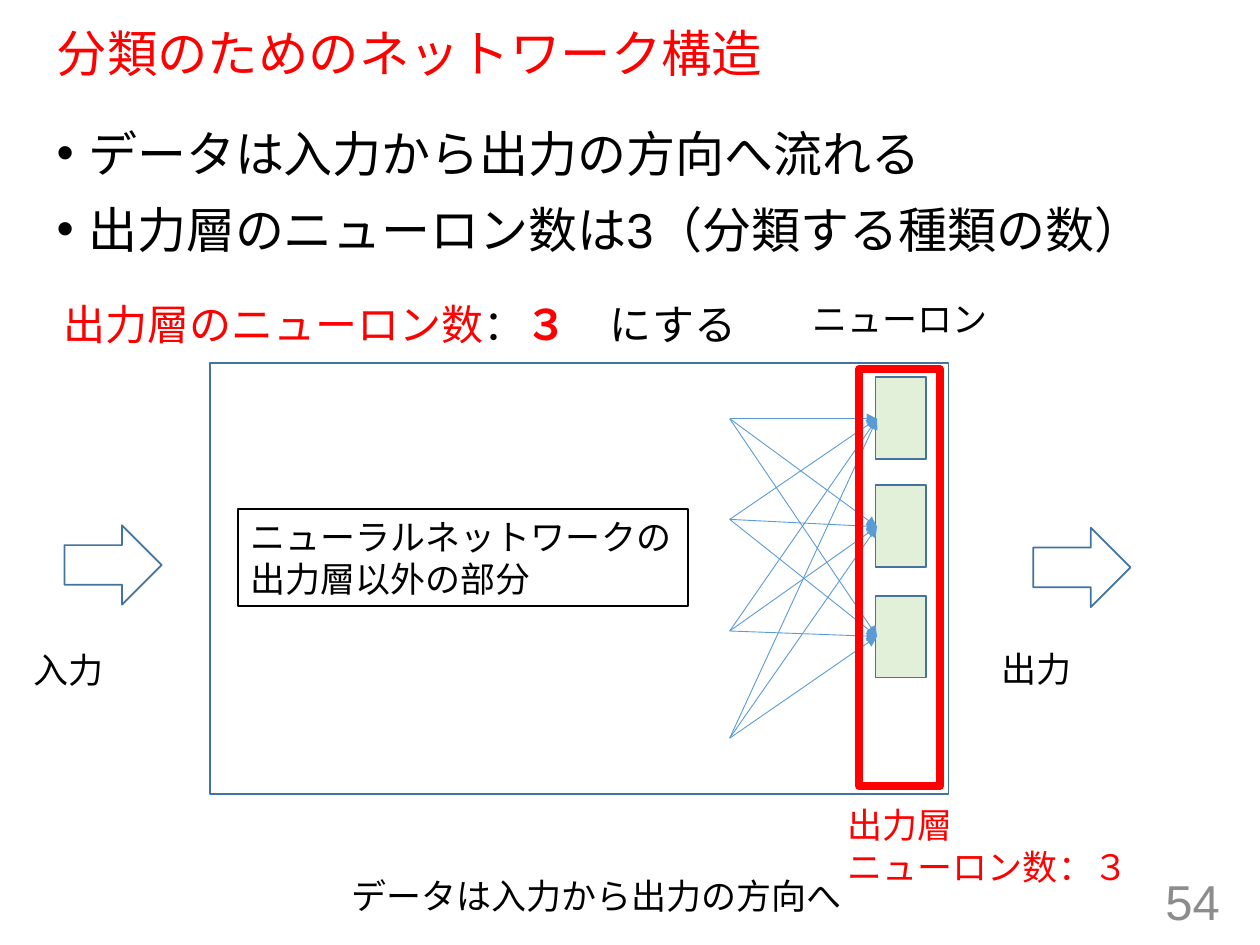
from lxml.etree import SubElement
from pptx import Presentation
from pptx.dml.color import RGBColor
from pptx.enum.shapes import MSO_CONNECTOR, MSO_SHAPE
from pptx.enum.text import MSO_ANCHOR, PP_ALIGN
from pptx.oxml.ns import qn
from pptx.util import Cm, Pt

RED, BLACK, BLUE = "FF0000", "000000", "43739E"
rgb = RGBColor.from_string

deck = Presentation()
deck.slide_width, deck.slide_height = Cm(25.4), Cm(19.05)
slide = deck.slides.add_slide(deck.slide_layouts[5])
shapes = slide.shapes


def write(box, paras, size, name, wrap=True, **form):
    """Fill a box; each paragraph is a list of (text, colour, bold) runs."""
    frame = box.text_frame
    frame.word_wrap = wrap
    for i, runs in enumerate(paras):
        para = frame.add_paragraph() if i else frame.paragraphs[0]
        look = {"alignment": PP_ALIGN.LEFT, **form}
        for key, value in look.items():
            setattr(para, key, value)
        for text, tint, bold in runs:
            run = para.add_run()
            run.text = text
            for key, value in {"size": Pt(size), "name": name, "bold": bold}.items():
                setattr(run.font, key, value)
            run.font.color.rgb = rgb(tint)
    return frame


def draw(kind, spot, line, width, fill=None):
    """Add a preset shape with an outline and an optional fill."""
    shape = shapes.add_shape(kind, *map(Cm, spot))
    shape.shadow.inherit = False
    shape.line.color.rgb = rgb(line)
    shape.line.width = Pt(width)
    if fill:
        shape.fill.solid()
        shape.fill.fore_color.rgb = rgb(fill)
    else:
        shape.fill.background()
    return shape


# Title
title = shapes.title
spot = {"left": 0.89, "top": 0.48, "width": 23.5, "height": 1.3}
for key, value in spot.items():
    setattr(title, key, Cm(value))
frame = write(title, [[("分類のためのネットワーク構造", RED, False)]], 28.8, "Arial",
              line_spacing=0.9)
frame.vertical_anchor = MSO_ANCHOR.MIDDLE

# Bullets
body = shapes.add_textbox(Cm(0.89), Cm(2.36), Cm(23.5), Cm(3.07))
points = ["データは入力から出力の方向へ流れる", "出力層のニューロン数は3（分類する種類の数）"]
frame = write(body, [[(text, BLACK, False)] for text in points], 28, "Arial",
              space_before=Pt(10))
for para in frame.paragraphs:
    props = para._p.get_or_add_pPr()
    props.set("marL", str(Cm(0.64)))
    props.set("indent", str(-Cm(0.64)))
    SubElement(props, qn("a:buFont")).set("typeface", "Arial")
    SubElement(props, qn("a:buChar")).set("char", "•")

# Page number
page = shapes.add_textbox(Cm(19.13), Cm(17.65), Cm(5.71), Cm(1.02))
frame = write(page, [[("54", "8C8C8C", False)]], 28, "Arial", alignment=PP_ALIGN.RIGHT)
frame.vertical_anchor = MSO_ANCHOR.MIDDLE

# Output neurons
for top in (7.6, 9.78, 12.01):
    draw(MSO_SHAPE.RECTANGLE, (17.65, top, 1.02, 1.65), BLUE, 1, "E2F0D9")

# Input and output arrows
for left, top in ((1.3, 10.59), (20.83, 10.64)):
    draw(MSO_SHAPE.RIGHT_ARROW, (left, top, 1.96, 1.6), BLUE, 1)

# Links from the previous layer to each output neuron
for start in (8.44, 10.47, 12.72, 14.88):
    for end in (8.44, 10.62, 12.83):
        link = shapes.add_connector(MSO_CONNECTOR.STRAIGHT, Cm(14.71), Cm(start),
                                    Cm(17.68), Cm(end))
        link.line.color.rgb = rgb("5B9BD5")
        link.line.width = Pt(0.5)
        SubElement(link.line._get_or_add_ln(), qn("a:tailEnd")).set("type", "triangle")
        SubElement(link._element.spPr, qn("a:effectLst"))

# Network frame and output layer frame
draw(MSO_SHAPE.RECTANGLE, (4.24, 7.32, 14.88, 8.69), BLUE, 1)
draw(MSO_SHAPE.RECTANGLE, (17.32, 7.44, 1.63, 8.41), RED, 4.5)

# Labels
labels = [
    ((0.43, 12.95, 1.93, 1.12), BLACK, ["入力"]),
    ((19.94, 12.93, 1.93, 1.12), BLACK, ["出力"]),
    ((6.83, 17.5, 10.49, 1.12), BLACK, ["データは入力から出力の方向へ"]),
    ((16.13, 5.87, 4.06, 1.12), BLACK, ["ニューロン"]),
    ((16.84, 16.08, 6.22, 1.96), RED, ["出力層", "ニューロン数：３"]),
]
for spot, tint, lines in labels:
    box = shapes.add_textbox(*map(Cm, spot))
    write(box, [[(text, tint, False)] for text in lines], 20, "Calibri", wrap=False)

# Hidden part of the network
part = draw(MSO_SHAPE.RECTANGLE, (4.8, 10.26, 9.07, 1.96), BLACK, 0.75)
lines = ["ニューラルネットワークの", "出力層以外の部分"]
frame = write(part, [[(text, BLACK, False)] for text in lines], 20, "Calibri", wrap=False)
frame.vertical_anchor = MSO_ANCHOR.TOP

# Neuron count
count = shapes.add_textbox(Cm(1.04), Cm(5.89), Cm(20.4), Cm(2.87))
runs = [("出力層のニューロン数", RED, False), ("：", BLACK, False),
        ("３", RED, True), ("　にする", BLACK, False)]
write(count, [runs], 24, "Arial", space_before=Pt(10))

deck.save("out.pptx")
